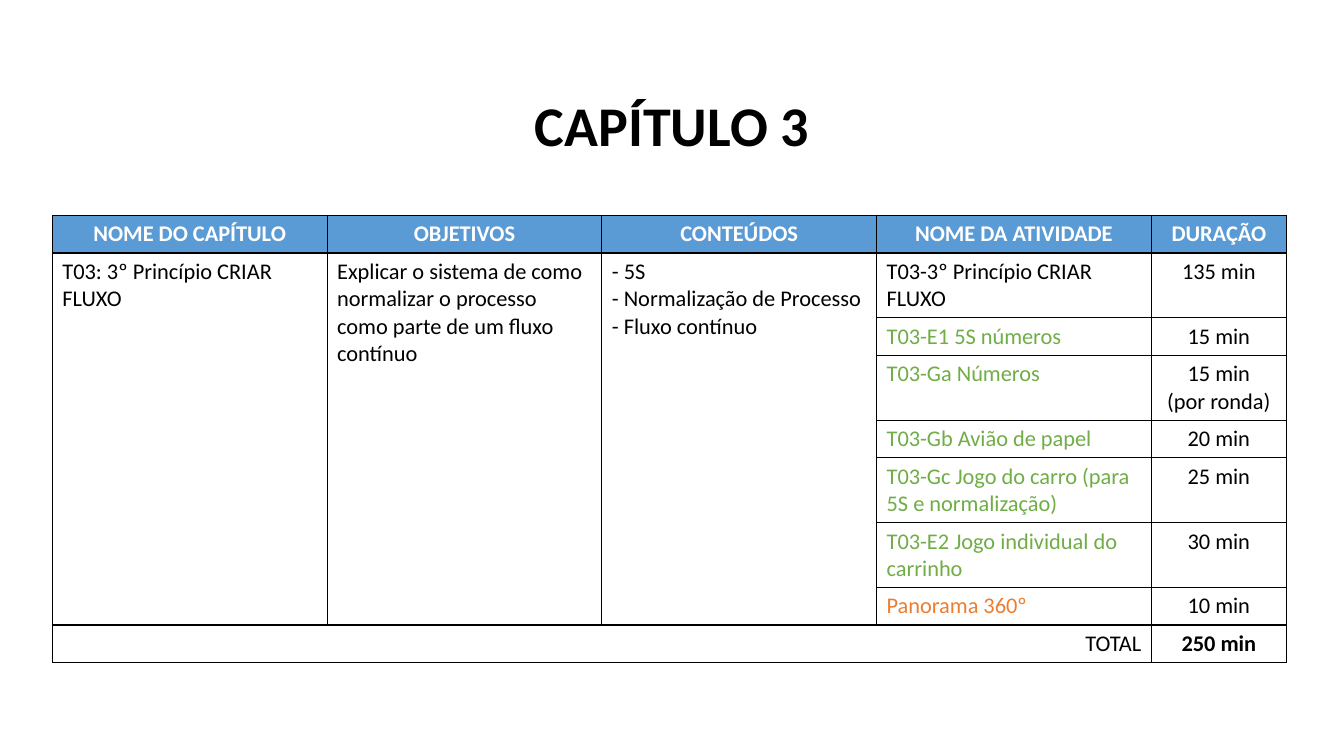
from lxml import etree
from pptx import Presentation
from pptx.dml.color import RGBColor
from pptx.enum.text import MSO_ANCHOR, PP_ALIGN
from pptx.oxml.ns import qn
from pptx.util import Inches, Pt

LEFT, CENTER, RIGHT = PP_ALIGN.LEFT, PP_ALIGN.CENTER, PP_ALIGN.RIGHT
TOP, MIDDLE = MSO_ANCHOR.TOP, MSO_ANCHOR.MIDDLE
FONT = "Calibri"
BLACK, WHITE, BLUE = "000000", "FFFFFF", "5B9BD5"
GREEN, ORANGE = "70AD47", "ED7D31"

# Grid in inches: four wide columns and a narrow one, rows by line count
WIDE, SLIM = 2.725, 1.34
ROW = {1: 0.37, 2: 0.63}
LINES = [1, 2, 1, 2, 1, 2, 2, 1, 1]

HEADS = ["NOME DO CAPÍTULO", "OBJETIVOS", "CONTEÚDOS", "NOME DA ATIVIDADE", "DURAÇÃO"]
CHAPTER = [
    "T03: 3º Princípio CRIAR FLUXO",
    "Explicar o sistema de como normalizar o processo como parte de um fluxo contínuo",
    "- 5S\n- Normalização de Processo\n- Fluxo contínuo",
]
TASKS = [
    ("T03-3º Princípio CRIAR FLUXO", BLACK, "135 min"),
    ("T03-E1 5S números", GREEN, "15 min"),
    ("T03-Ga Números", GREEN, "15 min\n(por ronda)"),
    ("T03-Gb Avião de papel", GREEN, "20 min"),
    ("T03-Gc Jogo do carro (para 5S e normalização)", GREEN, "25 min"),
    ("T03-E2 Jogo individual do carrinho", GREEN, "30 min"),
    ("Panorama 360º", ORANGE, "10 min"),
]


def paint(target, color):
    """Give a fill a solid colour."""
    target.solid()
    target.fore_color.rgb = RGBColor.from_string(color)


def write(frame, text, size=16, color=BLACK, bold=False, align=LEFT):
    """Write one paragraph for each line of the text."""
    frame.text = text
    for para in frame.paragraphs:
        para.alignment = align
        for run in para.runs:
            run.font.name = FONT
            run.font.size = Pt(size)
            run.font.bold = bold
            paint(run.font.fill, color)


def border(cell):
    """Draw a thin black line on all four sides."""
    props = cell._tc.get_or_add_tcPr()
    for side in ("lnL", "lnR", "lnT", "lnB"):
        line = etree.SubElement(props, qn(f"a:{side}"), w=str(Pt(1)))
        solid = etree.SubElement(line, qn("a:solidFill"))
        etree.SubElement(solid, qn("a:srgbClr"), val=BLACK)


def add_title(slide, text, wide, high):
    title = slide.shapes.title
    title.left, title.top = int(wide * 0.188), int(high * 0.113)
    title.width, title.height = int(wide * 0.624), int(high * 0.103)
    write(title.text_frame, text, size=40, bold=True, align=CENTER)
    title.text_frame.vertical_anchor = TOP


def add_grid(slide, left, top):
    """Add the bare table with its sizes, lines and fills."""
    widths = [WIDE] * 4 + [SLIM]
    heights = [ROW[count] for count in LINES]
    table = slide.shapes.add_table(
        len(heights), len(widths), left, top,
        Inches(sum(widths)), Inches(sum(heights))).table
    for col, width in zip(table.columns, widths):
        col.width = Inches(width)
    for row, height in zip(table.rows, heights):
        row.height = Inches(height)
    for cell in table.iter_cells():
        border(cell)
        paint(cell.fill, WHITE)
    return table


def fill_grid(table):
    # Header
    for col, head in enumerate(HEADS):
        cell = table.cell(0, col)
        paint(cell.fill, BLUE)
        cell.vertical_anchor = MIDDLE
        write(cell.text_frame, head, color=WHITE, bold=True, align=CENTER)

    # Chapter cells span all the tasks
    last = len(TASKS)
    for col, text in enumerate(CHAPTER):
        cell = table.cell(1, col)
        cell.merge(table.cell(last, col))
        write(cell.text_frame, text)

    # Tasks and their times
    for row, (name, color, time) in enumerate(TASKS, 1):
        write(table.cell(row, 3).text_frame, name, color=color)
        write(table.cell(row, 4).text_frame, time, align=CENTER)

    # Total
    total = table.cell(last + 1, 0)
    total.merge(table.cell(last + 1, 3))
    write(total.text_frame, "TOTAL", align=RIGHT)
    write(table.cell(last + 1, 4).text_frame, "250 min", bold=True, align=CENTER)


def main():
    deck = Presentation()
    deck.slide_width, deck.slide_height = Inches(13.33), Inches(7.5)
    wide, high = deck.slide_width, deck.slide_height
    slide = deck.slides.add_slide(deck.slide_layouts[5])
    paint(slide.background.fill, WHITE)
    fill_grid(add_grid(slide, int(wide * 0.039), int(high * 0.285)))
    add_title(slide, "CAPÍTULO 3", wide, high)
    deck.save("out.pptx")


if __name__ == "__main__":
    main()
